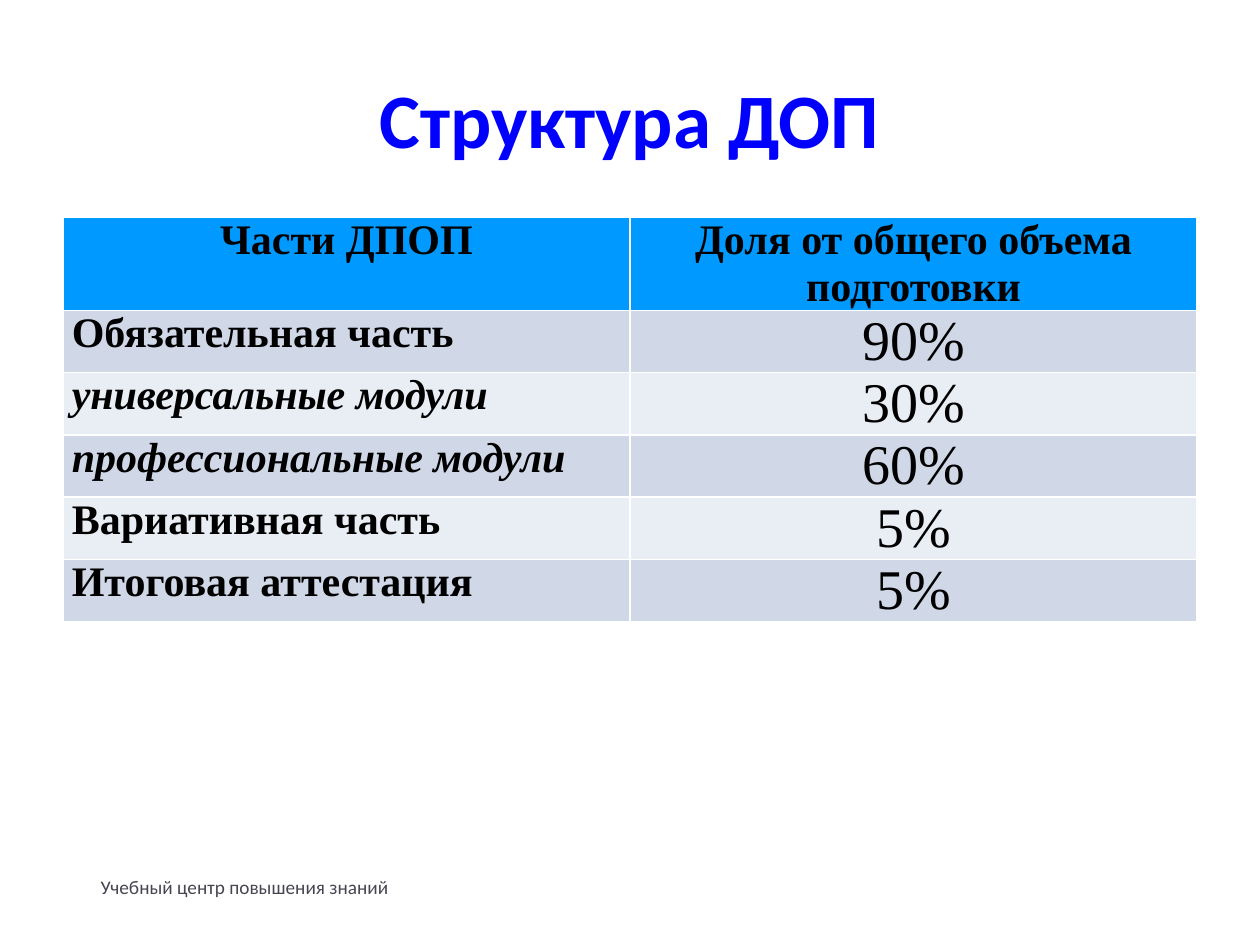
from lxml import etree
from pptx import Presentation
from pptx import util as u
from pptx.dml.color import RGBColor
from pptx.enum import text
from pptx.oxml import ns

TITLE_BLUE = RGBColor(0x00, 0x00, 0xFF)
HEADER_BLUE = RGBColor(0x00, 0x99, 0xFF)
BAND_DARK = RGBColor(0xD0, 0xD8, 0xE8)
BAND_LIGHT = RGBColor(0xE9, 0xED, 0xF4)
WHITE = RGBColor(0xFF, 0xFF, 0xFF)
BLACK = RGBColor(0x00, 0x00, 0x00)
FOOTER_GREY = RGBColor(0x46, 0x46, 0x53)

HEADINGS = ("Части ДПОП", "Доля от общего объема подготовки")
# Part of the programme, its share, whether it is a sub-part
PARTS = [
    ("Обязательная часть", "90%", False),
    ("универсальные модули", "30%", True),
    ("профессиональные модули", "60%", True),
    ("Вариативная часть", "5%", False),
    ("Итоговая аттестация", "5%", False),
]


def share_box(prs, left, top, width, height):
    """Turn shares of the slide's size into a box."""
    return (int(prs.slide_width * left), int(prs.slide_height * top),
            int(prs.slide_width * width), int(prs.slide_height * height))


def format_text(frame, font_name, size, color, align, bold=False, italic=False):
    paragraph = frame.paragraphs[0]
    paragraph.alignment = align
    for run in paragraph.runs:
        font = run.font
        font.name, font.size = font_name, u.Pt(size)
        font.bold, font.italic = bold, italic
        font.color.rgb = color


def add_borders(cell, color, width):
    properties = cell._tc.get_or_add_tcPr()
    for index, side in enumerate(("lnL", "lnR", "lnT", "lnB")):
        line = etree.Element(ns.qn(f"a:{side}"), w=str(u.Pt(width)))
        fill = etree.SubElement(line, ns.qn("a:solidFill"))
        etree.SubElement(fill, ns.qn("a:srgbClr"), val=str(color))
        properties.insert(index, line)


def fill_cell(cell, wording, fill, size, align, bold=False, italic=False):
    cell.margin_left = cell.margin_right = u.Inches(0.07)
    cell.margin_top = cell.margin_bottom = 0
    cell.fill.solid()
    cell.fill.fore_color.rgb = fill
    add_borders(cell, WHITE, 1)
    cell.text_frame.text = wording
    format_text(cell.text_frame, "Times New Roman", size, BLACK, align, bold, italic)


def place_title(slide, box):
    title = slide.shapes.title
    title.left, title.top, title.width, title.height = box
    title.text_frame.text = "Структура ДОП"
    title.text_frame.vertical_anchor = text.MSO_ANCHOR.MIDDLE
    format_text(title.text_frame, "Calibri", 44, TITLE_BLUE,
                text.PP_ALIGN.CENTER, bold=True)


def place_structure(slide, box):
    structure = slide.shapes.add_table(len(PARTS) + 1, len(HEADINGS), *box).table
    center, justify = text.PP_ALIGN.CENTER, text.PP_ALIGN.JUSTIFY

    # Heading row
    for column, heading in enumerate(HEADINGS):
        fill_cell(structure.cell(0, column), heading, HEADER_BLUE, 24, center, bold=True)

    # Banded rows of parts and shares
    for row, (part, share, is_sub_part) in enumerate(PARTS, start=1):
        band = BAND_DARK if row % 2 else BAND_LIGHT
        fill_cell(structure.cell(row, 0), part, band, 24, justify,
                  bold=True, italic=is_sub_part)
        fill_cell(structure.cell(row, 1), share, band, 32, center)


def place_footer(slide, box):
    frame = slide.shapes.add_textbox(*box).text_frame
    frame.word_wrap = True
    frame.auto_size = text.MSO_AUTO_SIZE.SHAPE_TO_FIT_TEXT
    frame.text = "Учебный центр повышения знаний"
    format_text(frame, "Calibri", 11, FOOTER_GREY, text.PP_ALIGN.LEFT)


def main():
    prs = Presentation()
    prs.slide_width, prs.slide_height = u.Inches(10), u.Inches(7.5)
    slide = prs.slides.add_slide(prs.slide_layouts[5])
    place_title(slide, share_box(prs, 0.05, 0.04, 0.9, 0.17))
    place_structure(slide, share_box(prs, 0.05, 0.23, 0.9, 0.33))
    place_footer(slide, share_box(prs, 0.07, 0.92, 0.4, 0.04))
    prs.save("out.pptx")


if __name__ == "__main__":
    main()
